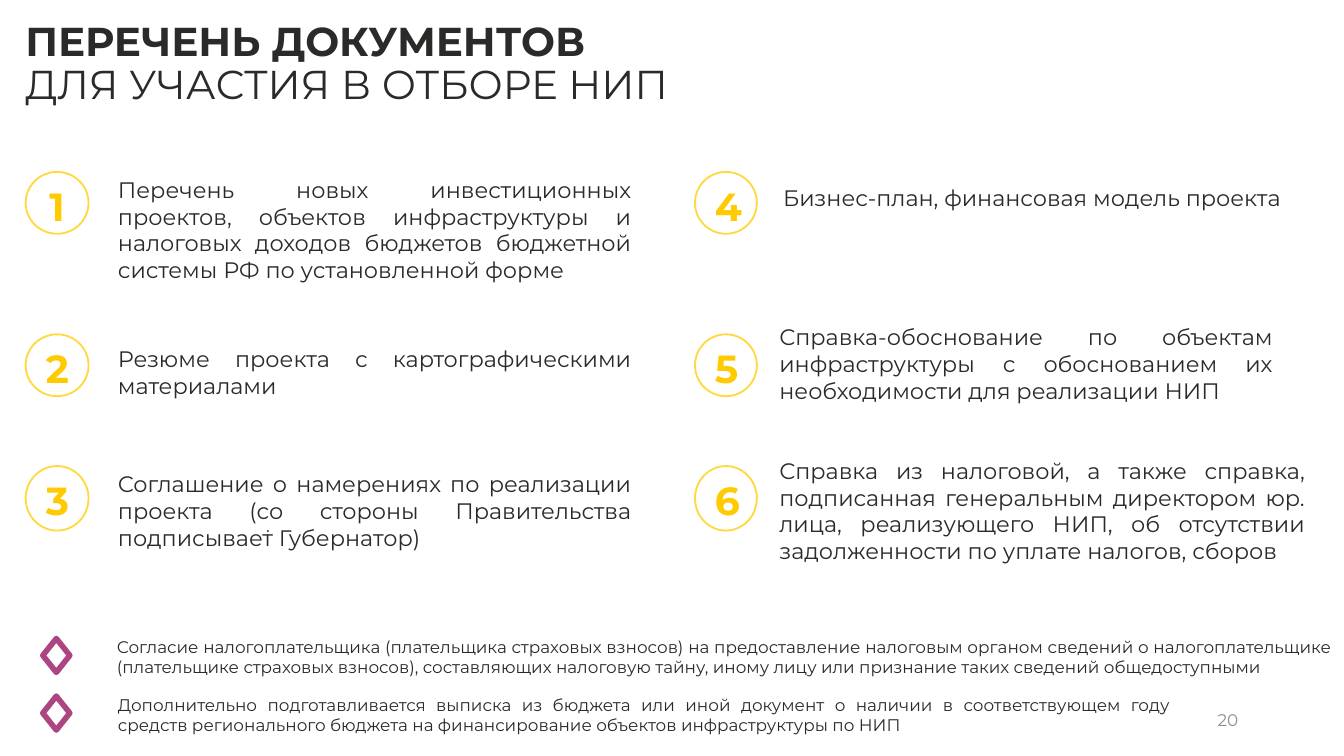
from pptx import Presentation
from pptx.dml.color import RGBColor
from pptx.enum.shapes import MSO_SHAPE
from pptx.enum.text import MSO_ANCHOR, PP_ALIGN
from pptx.util import Cm, Pt

OVAL, DIAMOND = MSO_SHAPE.OVAL, MSO_SHAPE.DIAMOND
TOP, MIDDLE = MSO_ANCHOR.TOP, MSO_ANCHOR.MIDDLE
LEFT, CENTER, RIGHT, JUSTIFY = (
    PP_ALIGN.LEFT, PP_ALIGN.CENTER, PP_ALIGN.RIGHT, PP_ALIGN.JUSTIFY)

WHITE = RGBColor(0xFF, 0xFF, 0xFF)
DARK = RGBColor(0x2B, 0x2A, 0x29)
GRAY = RGBColor(0x8F, 0x8E, 0x8E)
BROWN = RGBColor(0x45, 0x2E, 0x23)
YELLOW = RGBColor(0xFF, 0xD9, 0x40)
GOLD = RGBColor(0xFF, 0xCB, 0x00)
PURPLE = RGBColor(0xAD, 0x45, 0x82)

# Number centre and circle width of each column
COLUMNS = [(1.08, 1.19), (13.72, 1.17)]
# Top and height of the circles in each row
ROWS = [(3.25, 1.17), (6.32, 1.17), (8.81, 1.22)]

# Text and its box, down the left column and then the right one
DOCUMENTS = [
    ("Перечень новых инвестиционных проектов, объектов инфраструктуры и "
     "налоговых доходов бюджетов бюджетной системы РФ по установленной форме",
     (1.98, 3.2, 10.21, 2.31)),
    ("Резюме проекта с картографическими материалами",
     (1.98, 6.4, 10.21, 1.27)),
    ("Соглашение о намерениях по реализации проекта (со стороны "
     "Правительства подписывает Губернатор)",
     (1.98, 8.76, 10.21, 1.8)),
    ("Бизнес-план, финансовая модель проекта",
     (14.55, 3.35, 10.21, 0.76)),
    ("Справка-обоснование по объектам инфраструктуры с обоснованием их "
     "необходимости для реализации НИП",
     (14.48, 5.99, 9.83, 1.8)),
    ("Справка из налоговой, а также справка, подписанная генеральным "
     "директором юр. лица, реализующего НИП, об отсутствии задолженности "
     "по уплате налогов, сборов",
     (14.48, 8.51, 10.44, 2.31)),
]

NOTES = [
    ("Согласие налогоплательщика (плательщика страховых взносов) на "
     "предоставление налоговым органом сведений о налогоплательщике "
     "(плательщике страховых взносов), составляющих налоговую тайну, иному "
     "лицу или признание таких сведений общедоступными",
     (1.96, 11.91, 23.42, 1.02)),
    ("Дополнительно подготавливается выписка из бюджета или иной документ о "
     "наличии в соответствующем году средств регионального бюджета на "
     "финансирование объектов инфраструктуры по НИП",
     (1.98, 13.0, 20.35, 1.02)),
]


class SlideBuilder:
    font = "Montserrat"

    def __init__(self, slide):
        self.slide = slide

    def text(self, text, box, size, color=DARK, align=JUSTIFY, anchor=TOP,
             bold=False, italic=False, font=None, wrap=True):
        sp = self.slide.shapes.add_textbox(*map(Cm, box))
        tf = sp.text_frame
        tf.word_wrap = wrap
        tf.vertical_anchor = anchor
        tf.text = text
        p = tf.paragraphs[0]
        p.alignment = align
        for r in p.runs:
            r.font.name = font or self.font
            r.font.size = Pt(size)
            r.font.bold = bold
            r.font.italic = italic
            r.font.color.rgb = color
        return tf

    def title(self, text, box):
        tf = self.text(text, box, 21.6, align=LEFT, anchor=MIDDLE)
        tf.margin_left = tf.margin_right = tf.margin_top = tf.margin_bottom = 0
        p = tf.paragraphs[0]
        p.line_spacing = 0.9
        p.runs[0].font.bold = True

    def outline(self, kind, box, color, width):
        sp = self.slide.shapes.add_shape(kind, *map(Cm, box))
        sp.shadow.inherit = False
        sp.fill.solid()
        sp.fill.fore_color.rgb = WHITE
        sp.line.color.rgb = color
        sp.line.width = Pt(width)

    def badge(self, number, center, top, width, height):
        self.outline(OVAL, (center - width / 2, top, width, height), YELLOW, 1)
        self.text(str(number), (center - 0.46, top + 0.07, 0.92, 1.14), 21,
                  GOLD, CENTER, bold=True, wrap=False)


def main():
    prs = Presentation()
    prs.slide_width, prs.slide_height = Cm(25.4), Cm(14.29)
    s = SlideBuilder(prs.slides.add_slide(prs.slide_layouts[6]))

    # Title and page number
    s.title("ПЕРЕЧЕНЬ ДОКУМЕНТОВ\vДЛЯ УЧАСТИЯ В ОТБОРЕ НИП",
            (0.48, 0.61, 21.92, 1.24))
    s.text("20", (17.93, 13.23, 5.72, 0.76), 9, GRAY, RIGHT, MIDDLE)

    # Small dot mark
    s.text(".", (1.08, 9.63, 8, 0.64), 9, BROWN, CENTER, italic=True,
           font="Arial")

    # Numbered documents
    for i, (text, box) in enumerate(DOCUMENTS):
        column, row = divmod(i, len(ROWS))
        center, width = COLUMNS[column]
        top, height = ROWS[row]
        s.badge(i + 1, center, top, width, height)
        s.text(text, box, 12)

    # Notes with diamond markers
    for text, box in NOTES:
        s.outline(DIAMOND, (0.81, box[1] + 0.16, 0.51, 0.64), PURPLE, 3)
        s.text(text, box, 9)

    prs.save("out.pptx")


if __name__ == "__main__":
    main()
